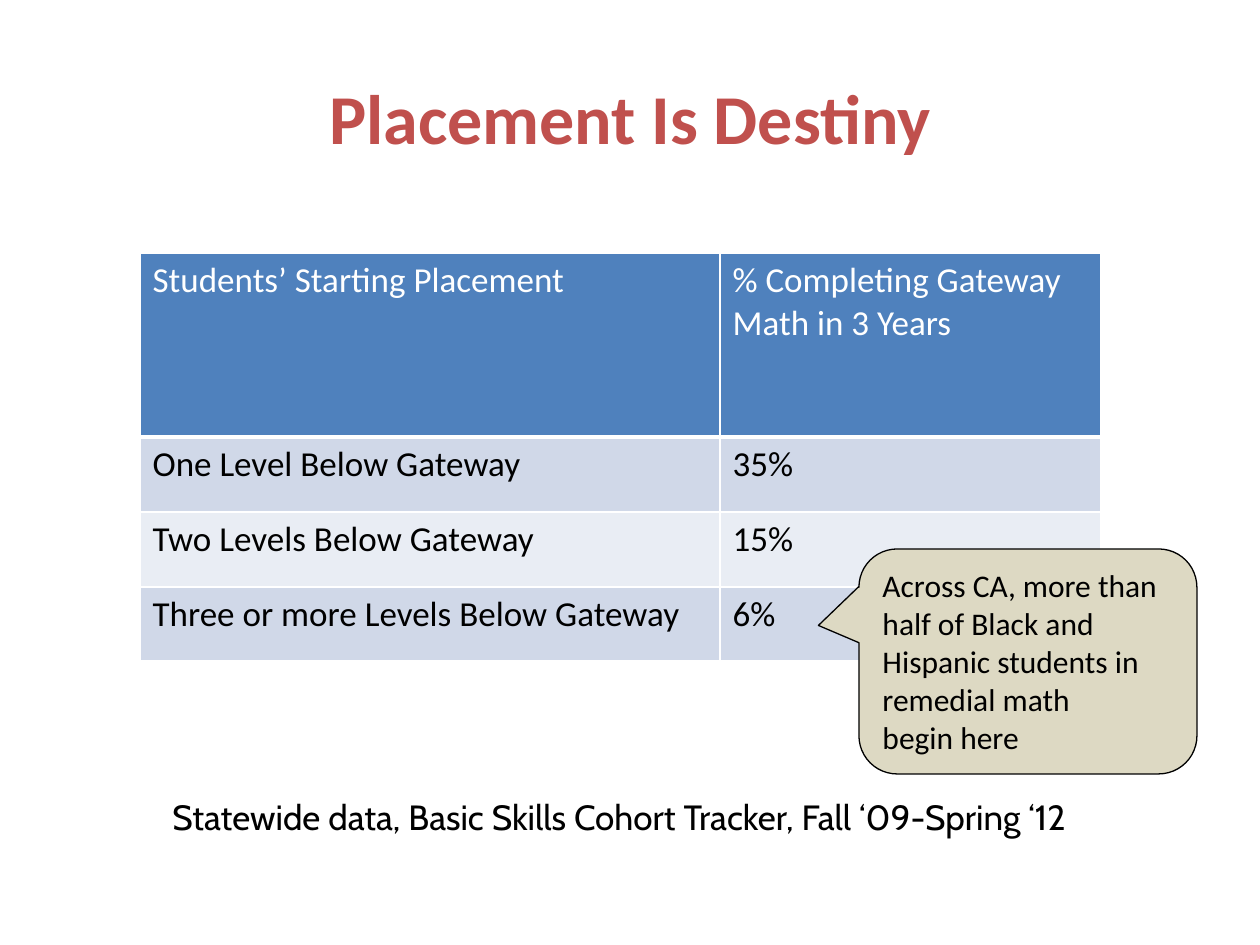
from lxml.etree import SubElement as Sub
from pptx import Presentation
from pptx.dml.color import RGBColor as RGB
from pptx.enum.shapes import MSO_SHAPE as Kind
from pptx.enum.text import MSO_ANCHOR as Anchor, MSO_AUTO_SIZE as Auto, PP_ALIGN as Align
from pptx.oxml.ns import qn
from pptx.util import Pt


def px(*nums):
    """Turn pixel lengths into a list of EMU."""
    return [round(n * 914400 / 126) for n in nums]


def tint(code):
    """Turn a hex string into a colour."""
    return RGB.from_string(code)


class Deck:
    """Hold the style and the current slide."""

    font, ink, white, red = "Calibri", "000000", "FFFFFF", "C0504D"
    head, bands, sand = "4F81BD", ("D0D8E8", "E9EDF4"), "DDD9C3"

    def __init__(self, wide, high):
        """Start a deck with one title slide."""
        self.prs = Presentation()
        self.prs.slide_width, self.prs.slide_height = px(wide, high)
        self.slide = self.prs.slides.add_slide(self.prs.slide_layouts[5])

    def text(self, frame, lines, size, color=ink, font=font, bold=False, align=Align.LEFT):
        """Fill a text frame with one run per line."""
        frame.word_wrap = True
        for i, line in enumerate(lines):
            para = frame.add_paragraph() if i else frame.paragraphs[0]
            para.alignment = align
            run = para.add_run()
            run.text = line
            run.font.name, run.font.size, run.font.bold = font, Pt(size), bold
            run.font.color.rgb = tint(color)

    def title(self, words, box):
        """Place the slide title."""
        shape = self.slide.shapes.title
        shape.left, shape.top, shape.width, shape.height = px(*box)
        shape.text_frame.vertical_anchor = Anchor.MIDDLE
        self.text(shape.text_frame, [words], 40, self.red, bold=True, align=Align.CENTER)

    def edge(self, cell, base):
        """Draw the white borders of a cell."""
        props = cell._tc.get_or_add_tcPr()
        for side in "LRTB":
            width = base if side == "B" else 1
            line = Sub(props, qn("a:ln" + side), w=str(Pt(width)))
            Sub(Sub(line, qn("a:solidFill")), qn("a:srgbClr"), val=self.white)

    def table(self, rows, box, cols, highs):
        """Add a table with a header and banded rows."""
        grid = self.slide.shapes.add_table(len(rows), len(cols), *px(*box)).table
        for col, wide in zip(grid.columns, px(*cols)):
            col.width = wide
        for r, (row, high) in enumerate(zip(rows, px(*highs))):
            grid.rows[r].height = high
            for c, words in enumerate(row):
                cell = grid.cell(r, c)
                self.edge(cell, 1 if r else 3)
                cell.fill.solid()
                cell.fill.fore_color.rgb = tint(self.bands[(r - 1) % 2] if r else self.head)
                self.text(cell.text_frame, [words], 20, self.ink if r else self.white)

    def callout(self, lines, box, adjust):
        """Add a rounded speech callout."""
        shape = self.slide.shapes.add_shape(Kind.ROUNDED_RECTANGULAR_CALLOUT, *px(*box))
        for i, value in enumerate(adjust):
            shape.adjustments[i] = value
        shape.shadow.inherit = False
        shape.fill.solid()
        shape.fill.fore_color.rgb = tint(self.sand)
        shape.line.color.rgb = tint(self.ink)
        shape.line.width = Pt(0.75)
        shape.text_frame.vertical_anchor = Anchor.TOP
        self.text(shape.text_frame, lines, 18)
        shape.text_frame.auto_size = Auto.SHAPE_TO_FIT_TEXT

    def label(self, words, box, font):
        """Add a line of plain text."""
        frame = self.slide.shapes.add_textbox(*px(*box)).text_frame
        self.text(frame, [words], 20, font=font)
        frame.auto_size = Auto.SHAPE_TO_FIT_TEXT


def main():
    """Build and save the slide."""
    deck = Deck(1260, 945)
    deck.title("Placement Is Destiny", (63, 38, 1134, 157))
    rows = [
        ("Students’ Starting Placement", "% Completing Gateway Math in 3 Years"),
        ("One Level Below Gateway", "35%"),
        ("Two Levels Below Gateway", "15%"),
        ("Three or more Levels Below Gateway", "6%"),
    ]
    deck.table(rows, (140, 253, 961, 408), (580, 381), (184, 75, 75, 74))
    deck.callout(
        ["Across CA, more than half of Black and Hispanic students in remedial math", "begin here"],
        (859, 549, 338, 225),
        (-0.62, -0.16, 0.17),
    )
    deck.label(
        "Statewide data, Basic Skills Cohort Tracker, Fall ‘09-Spring ‘12",
        (160, 789, 946, 55),
        "Cabin",
    )
    deck.prs.save("out.pptx")


if __name__ == "__main__":
    main()
